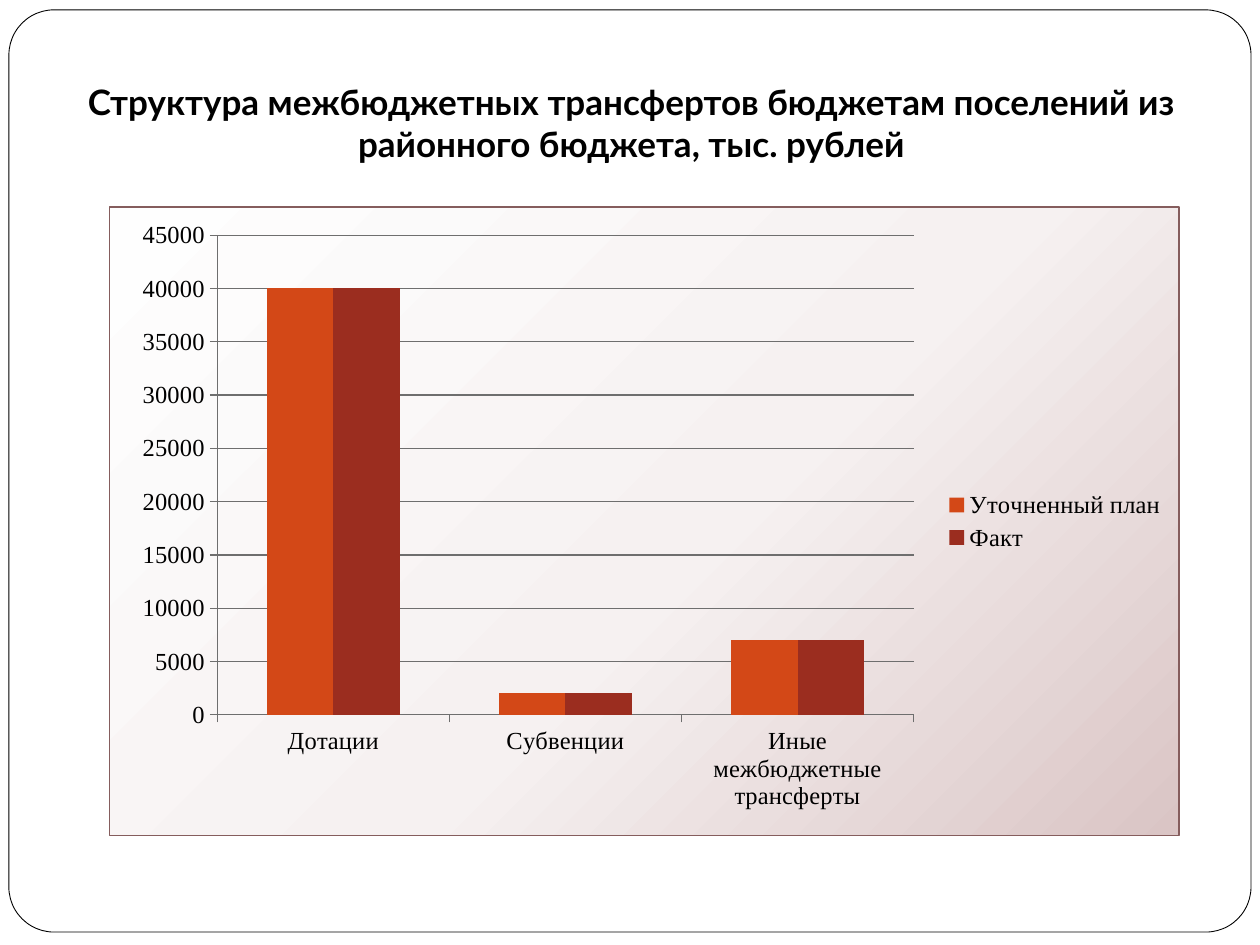
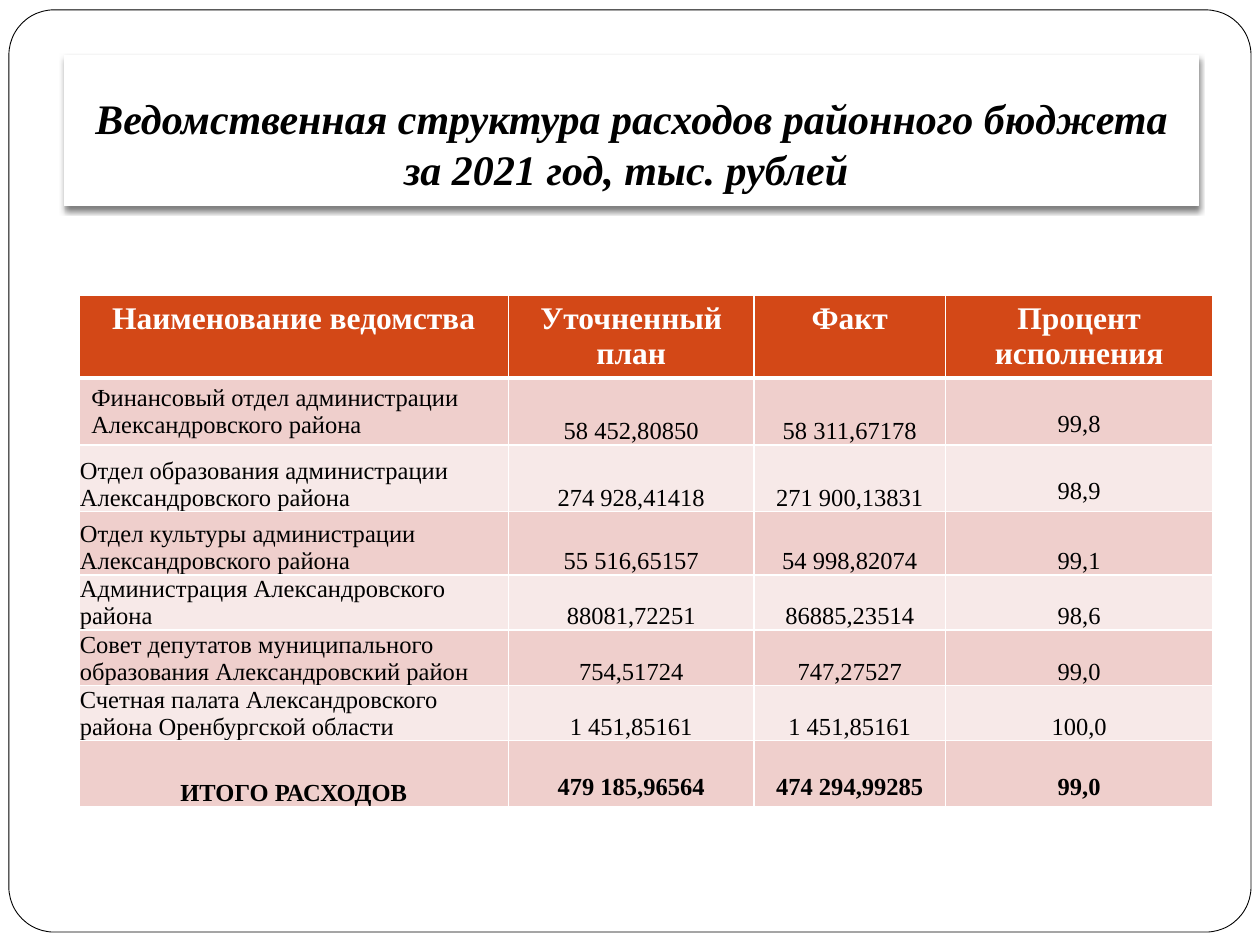
"""Two slides on a district budget: a transfers chart and a spending table."""
from lxml.etree import SubElement
from pptx import Presentation
from pptx.chart.data import CategoryChartData
from pptx.dml.color import RGBColor
from pptx.enum.chart import XL_CHART_TYPE, XL_LEGEND_POSITION, XL_TICK_MARK
from pptx.enum.shapes import MSO_SHAPE
from pptx.enum.text import MSO_ANCHOR, PP_ALIGN
from pptx.oxml import parse_xml
from pptx.oxml.ns import nsdecls, qn
from pptx.util import Cm, Pt

COLORS = {
    "white": "FFFFFF", "black": "000000", "orange": "D34817", "red": "9B2D1F",
    "band_dark": "EFCFCC", "band_light": "F7E9E8", "axis": "6E6E6E",
    "border": "855D5D", "glow": "FEFEFE", "mist": "F6F1F1", "rose": "DAC5C5",
}
SERIF = "Times New Roman"
TITLE_PLAIN = {"name": "Lato", "size": Pt(20), "bold": True}
TITLE_ITALIC = {"name": SERIF, "size": Pt(24), "bold": True, "italic": True}
HEADER = {"name": SERIF, "size": Pt(18), "bold": True}
BODY = {"name": SERIF, "size": Pt(14), "bold": False}
TOTAL = {**BODY, "bold": True}

LOOSE = {"margin_left": Cm(0.25), "margin_right": Cm(0.25),
         "margin_top": Cm(0.13), "margin_bottom": Cm(0.13),
         "vertical_anchor": MSO_ANCHOR.TOP}
LOWERED = {**LOOSE, "margin_top": Cm(0.66)}
TIGHT = {"margin_left": Cm(0.02), "margin_right": Cm(0.02),
         "margin_top": Cm(0.02), "margin_bottom": Cm(0),
         "vertical_anchor": MSO_ANCHOR.BOTTOM}
TITLE_FRAME = {**LOOSE, "margin_bottom": Cm(0.25), "word_wrap": True,
               "vertical_anchor": MSO_ANCHOR.BOTTOM}

CATEGORIES = ["Дотации", "Субвенции", "Иные межбюджетные трансферты"]
SERIES = [("Уточненный план", (40000, 2000, 7000), "orange"),
          ("Факт", (40000, 2000, 7000), "red")]
COL_WIDTHS = [8.66, 4.95, 3.86, 5.39]
ROW_HEIGHTS = [1.65, 1.34, 1.34, 1.28, 1.11, 1.11, 1.11, 1.34]
ROWS = [
    ("Наименование ведомства", "Уточненный план", "Факт", "Процент исполнения"),
    ("Финансовый отдел администрации Александровского района",
     "58 452,80850", "58 311,67178", "99,8"),
    ("Отдел образования администрации Александровского района",
     "274 928,41418", "271 900,13831", "98,9"),
    ("Отдел культуры администрации Александровского района",
     "55 516,65157", "54 998,82074", "99,1"),
    ("Администрация Александровского района",
     "88081,72251", "86885,23514", "98,6"),
    ("Совет депутатов муниципального образования Александровский район",
     "754,51724", "747,27527", "99,0"),
    ("Счетная палата Александровского района Оренбургской области",
     "1 451,85161", "1 451,85161", "100,0"),
    ("ИТОГО РАСХОДОВ", "479 185,96564", "474 294,99285", "99,0"),
]
LAST = len(ROWS) - 1
LOWERED_CELLS = {(1, 3), (2, 3), (LAST, 1), (LAST, 2), (LAST, 3)}


def rgb(name):
    """Return the named colour."""
    return RGBColor.from_string(COLORS[name])


def apply(target, values):
    """Set every attribute in values on target."""
    for key, value in values.items():
        setattr(target, key, value)


def cell_layout(i, j):
    """Return the margins and anchor of a table cell."""
    if i == 0 or (i, j) == (1, 0):
        return LOOSE
    return LOWERED if (i, j) in LOWERED_CELLS else TIGHT


class Deck:
    """Hold the presentation, its style and the current slide."""

    def __init__(self):
        """Start an empty 4:3 presentation."""
        self.prs = Presentation()
        self.prs.slide_width, self.prs.slide_height = Cm(25.4), Cm(19.05)
        self.s = None

    def slide(self):
        """Add a blank slide with the rounded frame."""
        self.s = self.prs.slides.add_slide(self.prs.slide_layouts[6])
        sp = self.shape(MSO_SHAPE.ROUNDED_RECTANGLE,
                        (0.18, 0.2, 25.04, 18.59), "black", 0.5)
        sp.adjustments[0] = 0.049

    def shape(self, kind, box, line=None, width=0.75):
        """Add a white preset shape."""
        sp = self.s.shapes.add_shape(kind, *map(Cm, box))
        sp.shadow.inherit = False
        sp.fill.solid()
        sp.fill.fore_color.rgb = rgb("white")
        if line:
            sp.line.color.rgb = rgb(line)
            sp.line.width = Pt(width)
        else:
            sp.line.fill.background()
        return sp

    def text(self, tf, text, font, color="black", align=PP_ALIGN.CENTER):
        """Write one formatted paragraph."""
        p = tf.paragraphs[0]
        p.alignment = align
        r = p.add_run()
        r.text = text
        apply(r.font, font)
        r.font.color.rgb = rgb(color)

    def title(self, text, height, font, raised=False):
        """Add a title box, raised by a shadow on request."""
        sp = self.shape(MSO_SHAPE.RECTANGLE, (1.3, 1.12, 22.86, height),
                        "white" if raised else None)
        apply(sp.text_frame, TITLE_FRAME)
        self.text(sp.text_frame, text, font)
        if raised:
            effects = sp._element.spPr.find(qn("a:effectLst"))
            shadow = SubElement(effects, qn("a:outerShdw"), blurRad=str(Pt(3)),
                                dist=str(Pt(2)), dir="5400000", rotWithShape="0")
            color = SubElement(shadow, qn("a:srgbClr"), val=COLORS["black"])
            SubElement(color, qn("a:alpha"), val="50000")

    def chart(self, box):
        """Add the clustered column chart."""
        data = CategoryChartData()
        data.categories = CATEGORIES
        for name, values, _ in SERIES:
            data.add_series(name, values)
        chart = self.s.shapes.add_chart(
            XL_CHART_TYPE.COLUMN_CLUSTERED, *map(Cm, box), data).chart
        apply(chart, {"has_title": False, "has_legend": True})
        apply(chart.legend, {"position": XL_LEGEND_POSITION.RIGHT,
                             "include_in_layout": False})
        apply(chart.font, BODY)
        chart.font.color.rgb = rgb("black")
        plot = chart.plots[0]
        apply(plot, {"gap_width": 150, "overlap": 0, "vary_by_categories": False})
        for ser, (_, _, color) in zip(plot.series, SERIES):
            ser.format.fill.solid()
            ser.format.fill.fore_color.rgb = rgb(color)
        axis = chart.value_axis
        apply(axis, {"minimum_scale": 0, "maximum_scale": 45000,
                     "major_unit": 5000, "has_major_gridlines": True})
        for ax in (axis, chart.category_axis):
            ax.major_tick_mark = XL_TICK_MARK.OUTSIDE
        for part in (axis, chart.category_axis, axis.major_gridlines):
            part.format.line.color.rgb = rgb("axis")
            part.format.line.width = Pt(0.75)
        self.chart_area(chart)

    def chart_area(self, chart):
        """Place the plot and paint the chart background."""
        area = chart.element.find(qn("c:chart")).find(qn("c:plotArea"))
        for old in area.findall(qn("c:layout")):
            area.remove(old)
        places = {"layoutTarget": "inner", "xMode": "edge", "yMode": "edge",
                  "x": 0.101, "y": 0.045, "w": 0.651, "h": 0.763}
        marks = "".join(f'<c:{k} val="{v}"/>' for k, v in places.items())
        area.insert(0, parse_xml(
            f'<c:layout {nsdecls("c")}><c:manualLayout>{marks}'
            '</c:manualLayout></c:layout>'))
        stops = "".join(
            f'<a:gs pos="{pos}000"><a:srgbClr val="{COLORS[name]}"/></a:gs>'
            for pos, name in ((0, "glow"), (55, "mist"), (100, "rose")))
        chart.element.find(qn("c:chart")).addnext(parse_xml(
            f'<c:spPr {nsdecls("c", "a")}><a:gradFill><a:gsLst>{stops}</a:gsLst>'
            '<a:path path="circle"><a:fillToRect l="-40000" t="-90000" '
            'r="140000" b="190000"/></a:path></a:gradFill>'
            f'<a:ln w="{Pt(0.75)}"><a:solidFill>'
            f'<a:srgbClr val="{COLORS["border"]}"/></a:solidFill></a:ln></c:spPr>'))

    def borders(self, cell, top, bottom):
        """Draw white borders round a table cell."""
        widths = {"L": 1, "R": 1, "T": top, "B": bottom}
        for n, (side, width) in enumerate(widths.items()):
            cell._tc.get_or_add_tcPr().insert(n, parse_xml(
                f'<a:ln{side} {nsdecls("a")} w="{Pt(width)}"><a:solidFill>'
                f'<a:srgbClr val="{COLORS["white"]}"/></a:solidFill></a:ln{side}>'))

    def table(self, left, top):
        """Add the table of spending by department."""
        tbl = self.s.shapes.add_table(
            len(ROWS), len(COL_WIDTHS), Cm(left), Cm(top),
            Cm(sum(COL_WIDTHS)), Cm(sum(ROW_HEIGHTS))).table
        for col, width in zip(tbl.columns, COL_WIDTHS):
            col.width = Cm(width)
        for i, (row, height) in enumerate(zip(ROWS, ROW_HEIGHTS)):
            tbl.rows[i].height = Cm(height)
            font = {0: HEADER, LAST: TOTAL}.get(i, BODY)
            band = "band_dark" if i % 2 else "band_light"
            for j, text in enumerate(row):
                cell = tbl.cell(i, j)
                apply(cell, cell_layout(i, j))
                cell.fill.solid()
                cell.fill.fore_color.rgb = rgb(band if i else "orange")
                named = j == 0 and 0 < i < LAST
                self.text(cell.text_frame, text, font,
                          "black" if i else "white",
                          PP_ALIGN.LEFT if named else PP_ALIGN.CENTER)
                self.borders(cell, 3 if i == 1 else 1, 1 if i else 3)


def main():
    """Build both slides and save them."""
    deck = Deck()
    deck.slide()
    deck.title("Структура межбюджетных трансфертов бюджетам поселений из "
               "районного бюджета, тыс. рублей", 2.44, TITLE_PLAIN)
    deck.chart((2.19, 4.16, 21.59, 12.7))
    deck.slide()
    deck.title("Ведомственная структура расходов районного бюджета "
               "за 2021 год, тыс. рублей ", 3.03, TITLE_ITALIC, raised=True)
    deck.table(1.59, 5.95)
    deck.prs.save("out.pptx")


if __name__ == "__main__":
    main()
